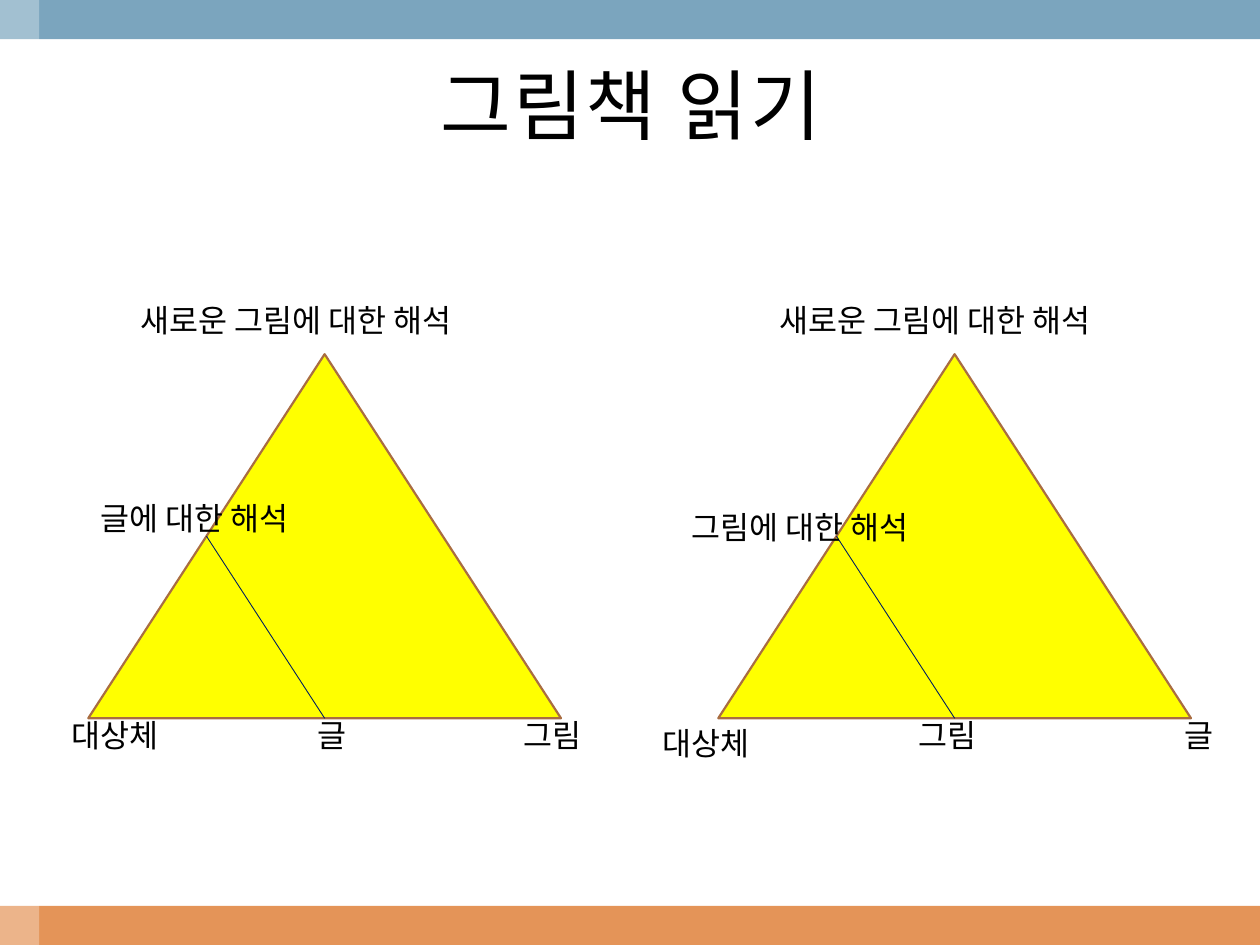
from dataclasses import dataclass

from lxml import etree
from pptx import Presentation
from pptx import util as u
from pptx.dml.color import RGBColor
from pptx.enum import shapes, text
from pptx.oxml.ns import qn


@dataclass(frozen=True)
class Theme:
    """Colours, font and type sizes."""
    font: str = "Cambria"
    title_size: int = 44
    label_size: int = 18
    ink: str = "000000"
    top_band: str = "7BA5BE"
    bottom_band: str = "E49458"
    veil: str = "FFFFFF"
    triangle: str = "FFFF00"
    outline: str = "A96D41"
    divider: str = "002060"


class SlideBuilder:
    """Draws styled elements on the current slide, in centimetres."""

    def __init__(self, page, theme):
        """Keep the slide and its theme."""
        self.page = page
        self.theme = theme

    def shape(self, kind, frame, fill, line=None, opacity=None):
        """Add a filled preset shape."""
        item = self.page.shapes.add_shape(kind, *map(u.Cm, frame))
        item.shadow.inherit = False
        item.fill.solid()
        item.fill.fore_color.rgb = RGBColor.from_string(fill)
        if opacity is not None:
            color = item.fill._xPr.find(".//" + qn("a:srgbClr"))
            etree.SubElement(color, qn("a:alpha"), val=str(opacity * 1000))
        if line:
            item.line.color.rgb = RGBColor.from_string(line)
            item.line.width = u.Pt(1.25)
        else:
            item.line.fill.background()

    def line(self, start, end):
        """Add a thin dividing line."""
        item = self.page.shapes.add_connector(
            shapes.MSO_CONNECTOR.STRAIGHT, *map(u.Cm, (*start, *end)))
        item.line.color.rgb = RGBColor.from_string(self.theme.divider)
        item.line.width = u.Pt(0.5)
        etree.SubElement(item._element.spPr, qn("a:effectLst"))

    def text(self, words, frame, size, wrap=False):
        """Add a one-line text box and return its paragraph and run."""
        box = self.page.shapes.add_textbox(*map(u.Cm, frame)).text_frame
        box.word_wrap = wrap
        para = box.paragraphs[0]
        span = para.add_run()
        span.text = words
        span.font.name = self.theme.font
        span.font.size = u.Pt(size)
        span.font.color.rgb = RGBColor.from_string(self.theme.ink)
        return box, para, span

    def title(self, words, frame):
        """Add the centred, letter-spaced title."""
        box, para, span = self.text(words, frame, self.theme.title_size, wrap=True)
        box.vertical_anchor = text.MSO_ANCHOR.MIDDLE
        para.alignment = text.PP_ALIGN.CENTER
        span.font._element.set("spc", "100")

    def label(self, words, left, top, width):
        """Add a diagram label."""
        self.text(words, (left, top, width, 1.02), self.theme.label_size)

    def triangle(self, left, top, width, height):
        """Add a triangle with a line from mid left side to mid base."""
        self.shape(shapes.MSO_SHAPE.ISOSCELES_TRIANGLE, (left, top, width, height),
                   self.theme.triangle, self.theme.outline)
        self.line((left + width / 4, top + height / 2),
                  (left + width / 2, top + height))


def main():
    """Build the slide and save it."""
    deck = Presentation()
    deck.slide_width, deck.slide_height = u.Cm(25.4), u.Cm(19.05)
    theme = Theme()
    slide = SlideBuilder(deck.slides.add_slide(deck.slide_layouts[6]), theme)

    band = 0.79
    rect = shapes.MSO_SHAPE.RECTANGLE
    slide.shape(rect, (0, 19.05 - band, 25.4, band), theme.bottom_band)
    slide.shape(rect, (0, 0, 25.4, band), theme.top_band)
    slide.shape(rect, (0, 0, band, 19.05), theme.veil, opacity=30)
    slide.title("그림책 읽기", (0.84, 0.79, 23.77, 2.62))

    for left in (1.78, 14.48):
        slide.triangle(left, 7.14, 9.53, 7.34)

    apex, base = 5.94, 14.3
    labels = [
        ("새로운 그림에 대한 해석", 2.59, apex, 7.59),
        ("대상체", 1.19, base, 2.44),
        ("글", 6.15, base, 1.14),
        ("그림", 10.31, base, 1.8),
        ("글", 23.62, base, 1.14),
        ("그림", 18.26, base, 1.8),
        ("대상체", 13.11, 14.48, 2.44),
        ("새로운 그림에 대한 해석", 15.47, apex, 7.59),
        ("글에 대한 해석", 1.78, 9.93, 4.83),
        ("그림에 대한 해석", 13.69, 10.11, 5.31),
    ]
    for label in labels:
        slide.label(*label)

    deck.save("out.pptx")


if __name__ == "__main__":
    main()
